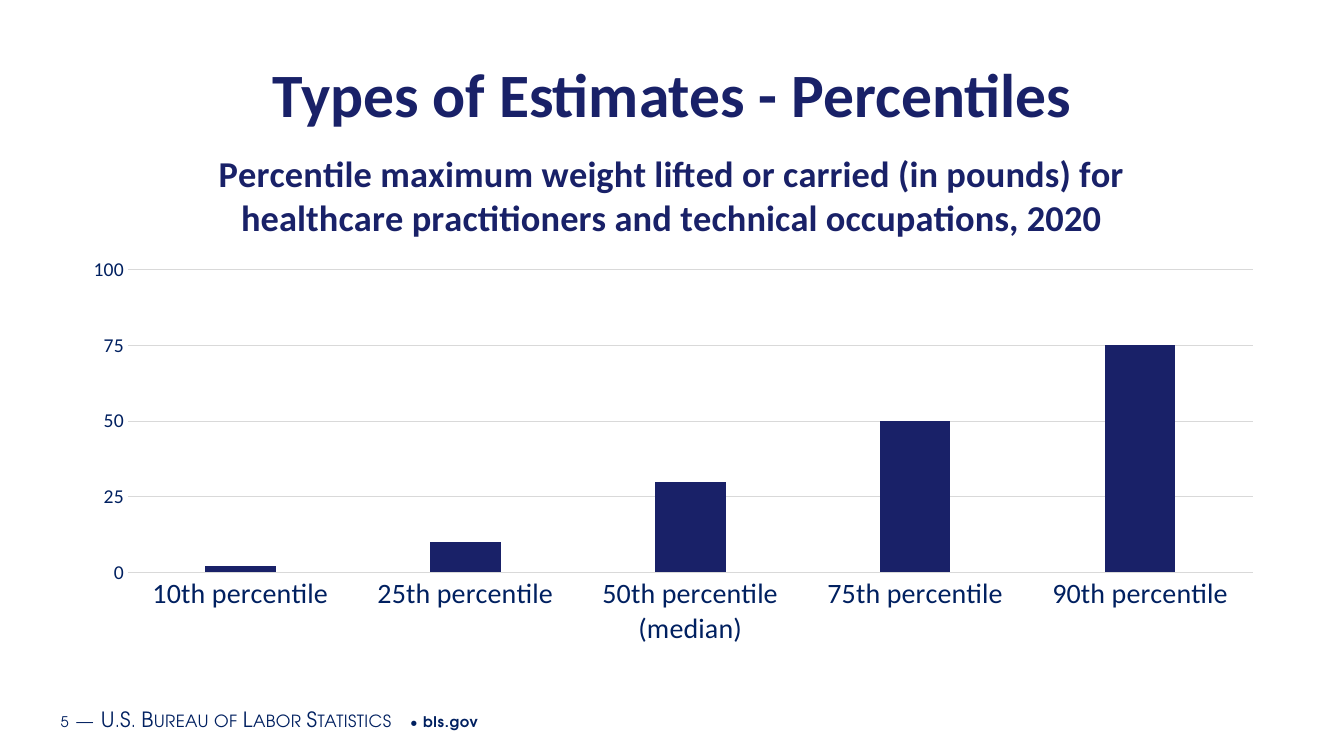
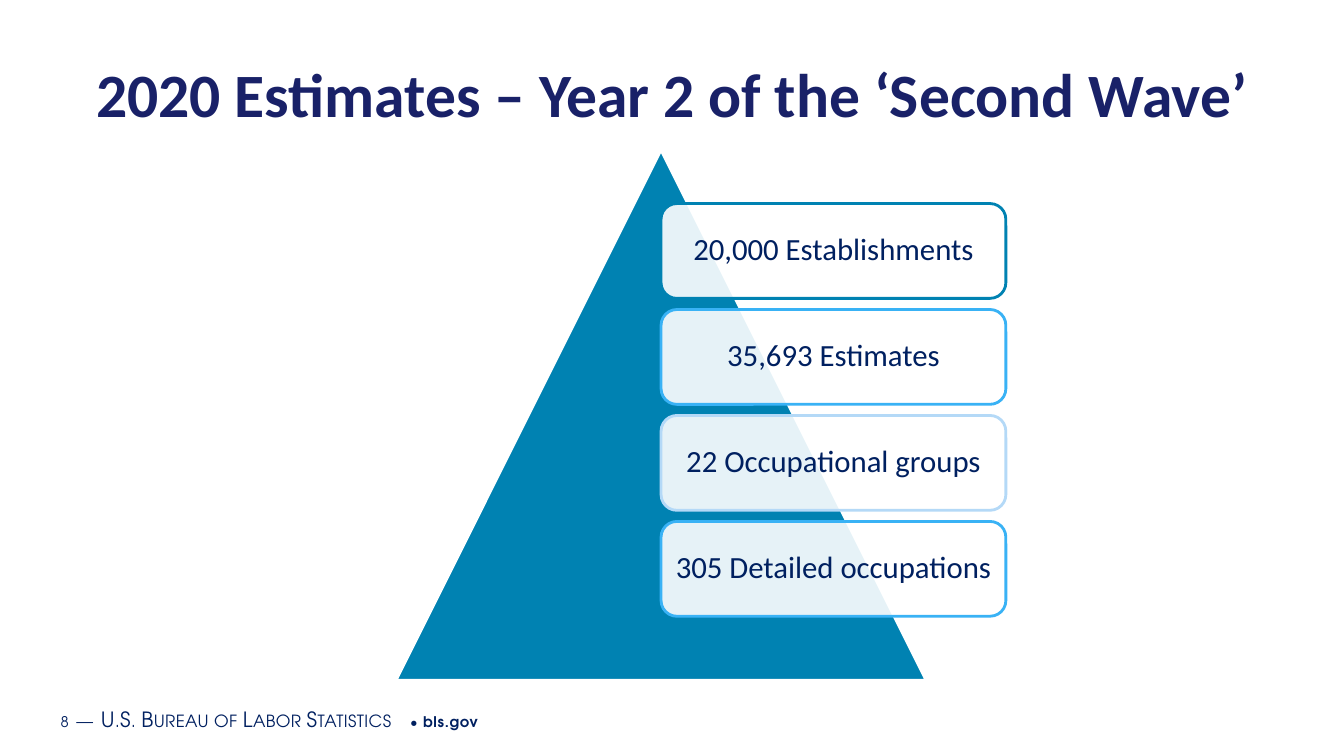
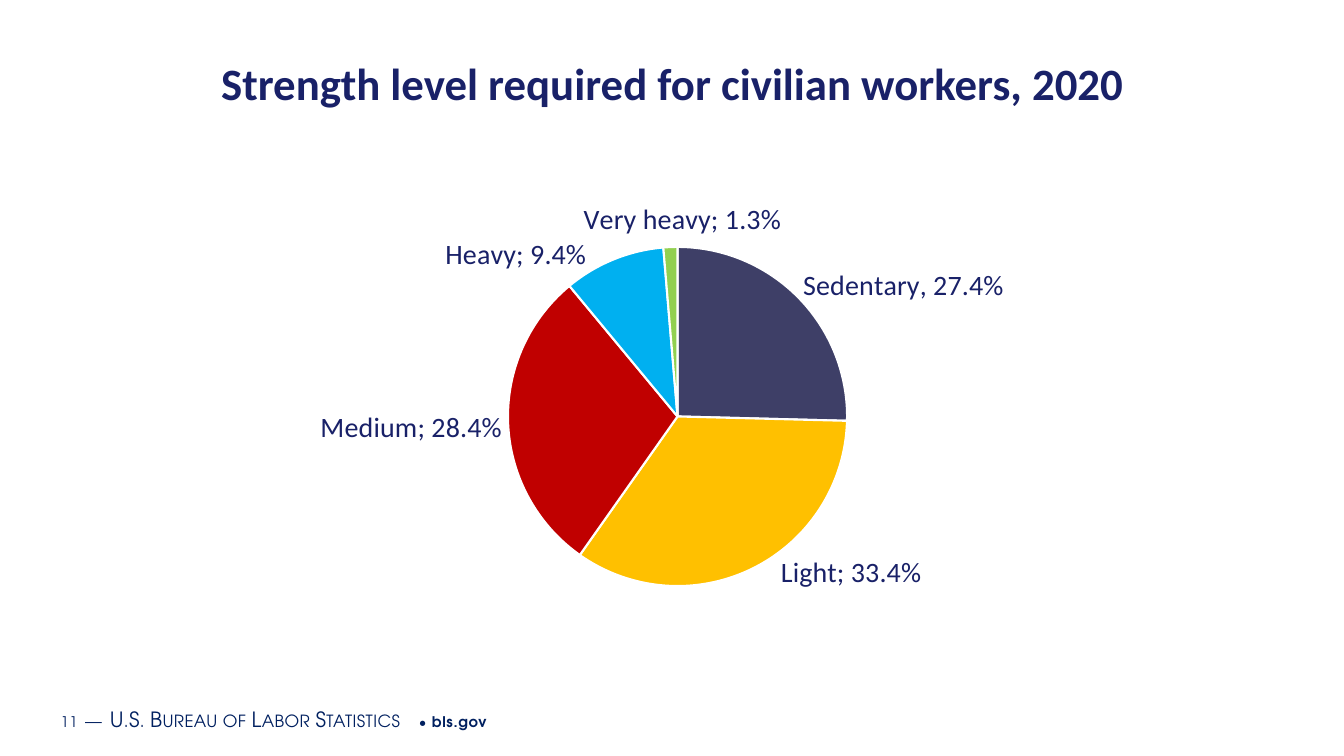
from dataclasses import dataclass
from typing import NamedTuple

from lxml import etree
from pptx import Presentation
from pptx import util as u
from pptx.chart import data
from pptx.dml.color import RGBColor
from pptx.enum import chart as charts
from pptx.enum import shapes, text
from pptx.oxml import ns


@dataclass(frozen=True)
class Theme:
    title_font: str = "Calibri"
    footer_font: str = "TeX Gyre Adventor"
    navy: str = "192168"
    ink: str = "002060"
    white: str = "FFFFFF"
    teal: str = "0082B2"
    sky: str = "39B2F5"
    pale: str = "B4D9F7"
    grid: str = "D9D9D9"
    title_size: float = 44
    small_title_size: float = 32
    chart_title_size: float = 26
    card_size: float = 22
    label_size: float = 20
    scale_size: float = 14
    footer_size: float = 15
    footer_small_size: float = 10.5
    footer_gap_size: float = 16


THEME = Theme()


class Box(NamedTuple):
    """Left, top, width and height in centimetres."""

    left: float
    top: float
    width: float
    height: float

    def lengths(self) -> list:
        return [u.Cm(value) for value in self]


class Card(NamedTuple):
    caption: str
    outline: str


class Slice(NamedTuple):
    """A pie slice; the shifts move its label by fractions of the chart area."""

    name: str
    share: float
    color: str
    shift_x: float
    shift_y: float


TITLE_BOX = Box(1.1, 1.28, 31.7, 2.24)
FOOTER_BOX = Box(1.35, 17.6, 21.5, 1.02)
COLUMN_BOX = Box(1.7, 3.18, 30.48, 13.39)
PIE_BOX = Box(1.37, 4.78, 31.1, 11.1)
TRIANGLE_BOX = Box(9.98, 3.78, 13.36, 13.36)
FIRST_CARD_BOX = Box(16.66, 5.13, 8.69, 2.39)
CARD_STEP = 2.67

PERCENTILES = {
    "10th percentile": 2,
    "25th percentile": 10,
    "50th percentile (median)": 30,
    "75th percentile": 50,
    "90th percentile": 75,
}
CARDS = [
    Card("20,000 Establishments", THEME.teal),
    Card("35,693 Estimates", THEME.sky),
    Card("22 Occupational groups", THEME.pale),
    Card("305 Detailed occupations", THEME.sky),
]
SLICES = [
    Slice("Sedentary", 0.247, "3E3F67", 0, 0.02),
    Slice("Light", 0.334, "FFC000", 0.02, -0.04),
    Slice("Medium", 0.284, "C00000", 0, 0.01),
    Slice("Heavy", 0.094, "00B0F0", -0.02, 0.04),
    Slice("Very heavy", 0.013, "92D050", 0.01, -0.01),
]


def rgb(color: str) -> RGBColor:
    return RGBColor.from_string(color)


def style_font(font, *, size: float, color: str = THEME.ink, name: str = THEME.title_font,
               bold: bool = False) -> None:
    font.name = name
    font.size = u.Pt(size)
    font.bold = bold
    font.color.rgb = rgb(color)


def style_line(line, color: str, width: float) -> None:
    line.color.rgb = rgb(color)
    line.width = u.Pt(width)


def add_text(paragraph, content: str, *, spacing: float = 0, small_caps: bool = False,
             **font_format) -> None:
    """Append a run; spacing is the letter spacing in points."""
    run = paragraph.add_run()
    run.text = content
    style_font(run.font, **font_format)
    properties = run.font._element
    if spacing:
        properties.set("spc", str(round(spacing * 100)))
    if small_caps:
        properties.set("cap", "small")


def add_title(slide, content: str, size: float) -> None:
    frame = slide.shapes.add_textbox(*TITLE_BOX.lengths()).text_frame
    frame.word_wrap = True
    paragraph = frame.paragraphs[0]
    paragraph.alignment = text.PP_ALIGN.CENTER
    add_text(paragraph, content, size=size, color=THEME.navy, bold=True)


def add_footer(slide, number: int) -> None:
    frame = slide.shapes.add_textbox(*FOOTER_BOX.lengths()).text_frame
    frame.word_wrap = True
    frame.vertical_anchor = text.MSO_ANCHOR.MIDDLE
    frame.margin_left = frame.margin_right = u.Cm(0.18)
    frame.margin_top = frame.margin_bottom = u.Cm(0.1)
    small = dict(size=THEME.footer_small_size, spacing=0.5)
    gap = dict(size=THEME.footer_gap_size, spacing=0.5)
    caps = dict(size=THEME.footer_size, spacing=0.3, small_caps=True)
    for content, run_format in [
        (str(number), small),
        (" ", gap),
        ("—", caps),
        (" ", gap),
        ("U.S. Bureau of Labor Statistics", caps),
        (" • ", small),
        ("bls.gov", dict(small, bold=True)),
    ]:
        add_text(frame.paragraphs[0], content, name=THEME.footer_font, **run_format)


def start_slide(presentation, number: int, title: str, title_size: float = THEME.title_size):
    slide = presentation.slides.add_slide(presentation.slide_layouts[6])
    add_footer(slide, number)
    add_title(slide, title, title_size)
    return slide


def add_shape(slide, kind, box: Box, fill: str, outline: str):
    shape = slide.shapes.add_shape(kind, *box.lengths())
    shape.shadow.inherit = False
    shape.fill.solid()
    shape.fill.fore_color.rgb = rgb(fill)
    style_line(shape.line, outline, 2)
    return shape


def set_opacity(shape, percent: int) -> None:
    color = shape.element.spPr.find(f"{ns.qn('a:solidFill')}/{ns.qn('a:srgbClr')}")
    etree.SubElement(color, ns.qn("a:alpha")).set("val", str(percent * 1000))


def add_card(slide, box: Box, card: Card) -> None:
    shape = add_shape(slide, shapes.MSO_SHAPE.ROUNDED_RECTANGLE, box, THEME.white, card.outline)
    set_opacity(shape, 90)
    frame = shape.text_frame
    frame.word_wrap = True
    frame.vertical_anchor = text.MSO_ANCHOR.MIDDLE
    frame.margin_left = frame.margin_right = 0
    paragraph = frame.paragraphs[0]
    paragraph.alignment = text.PP_ALIGN.CENTER
    paragraph.line_spacing = 0.9
    add_text(paragraph, card.caption, size=THEME.card_size)


def set_layout(parent, index: int, **settings) -> None:
    """Give a chart part a manual layout, put at the index its schema asks for."""
    for old_layout in parent.findall(ns.qn("c:layout")):
        parent.remove(old_layout)
    layout = etree.Element(ns.qn("c:layout"))
    parent.insert(index, layout)
    manual = etree.SubElement(layout, ns.qn("c:manualLayout"))
    for name, value in settings.items():
        etree.SubElement(manual, ns.qn(f"c:{name}")).set("val", str(value))


def place_plot(chart, **fractions: float) -> None:
    """Place the plot by fractions (x, y, w, h) of the chart area."""
    plot_area = chart.element.find(f".//{ns.qn('c:plotArea')}")
    set_layout(plot_area, 0, layoutTarget="inner", xMode="edge", yMode="edge", **fractions)


def add_chart(slide, kind, box: Box, categories, values, number_format: str = "General"):
    chart_data = data.CategoryChartData(number_format=number_format)
    chart_data.categories = categories
    chart_data.add_series("Series 1", values)
    chart = slide.shapes.add_chart(kind, *box.lengths(), chart_data).chart
    chart.has_legend = False
    chart.has_title = False
    style_font(chart.font, size=THEME.label_size)
    chart.plots[0].vary_by_categories = False
    return chart


def style_axis(axis, size: float) -> None:
    axis.major_tick_mark = axis.minor_tick_mark = charts.XL_TICK_MARK.NONE
    style_font(axis.tick_labels.font, size=size)


def build_percentiles(presentation) -> None:
    slide = start_slide(presentation, 5, "Types of Estimates - Percentiles")
    chart = add_chart(slide, charts.XL_CHART_TYPE.COLUMN_CLUSTERED, COLUMN_BOX,
                      list(PERCENTILES), list(PERCENTILES.values()))
    chart.has_title = True
    add_text(
        chart.chart_title.text_frame.paragraphs[0],
        "Percentile maximum weight lifted or carried (in pounds) for "
        "healthcare practitioners and technical occupations, 2020",
        size=THEME.chart_title_size, color=THEME.navy, bold=True,
    )
    place_plot(chart, x=0.05, y=0.27, w=0.93, h=0.57)

    plot = chart.plots[0]
    plot.gap_width = 219
    plot.overlap = -27
    columns = plot.series[0]
    columns.invert_if_negative = False
    columns.format.fill.solid()
    columns.format.fill.fore_color.rgb = rgb(THEME.navy)

    style_axis(chart.category_axis, THEME.label_size)
    style_line(chart.category_axis.format.line, THEME.grid, 0.75)
    scale = chart.value_axis
    style_axis(scale, THEME.scale_size)
    scale.minimum_scale, scale.maximum_scale, scale.major_unit = 0, 100, 25
    scale.format.line.fill.background()
    scale.has_major_gridlines = True
    style_line(scale.major_gridlines.format.line, THEME.grid, 0.75)


def build_second_wave(presentation) -> None:
    slide = start_slide(presentation, 8, "2020 Estimates – Year 2 of the ‘Second Wave’")
    add_shape(slide, shapes.MSO_SHAPE.ISOSCELES_TRIANGLE, TRIANGLE_BOX, THEME.teal, THEME.white)
    for index, card in enumerate(CARDS):
        box = FIRST_CARD_BOX._replace(top=FIRST_CARD_BOX.top + index * CARD_STEP)
        add_card(slide, box, card)


def label_slices(chart, series) -> None:
    label_format = dict(size=THEME.label_size, color=THEME.navy)
    labels = series.data_labels
    labels.number_format = "0.0%"
    labels.number_format_is_linked = False
    labels.position = charts.XL_LABEL_POSITION.OUTSIDE_END
    style_font(labels.font, **label_format)
    for index in range(len(SLICES)):
        label = series.points[index].data_label
        if index == 0:
            add_text(label.text_frame.paragraphs[0], "Sedentary, 27.4%", **label_format)
        else:
            style_font(label.font, **label_format)
        label.position = charts.XL_LABEL_POSITION.OUTSIDE_END

    root = chart.element
    for item, label_element in zip(SLICES, root.findall(f".//{ns.qn('c:dLbl')}")):
        set_layout(label_element, 1, x=item.shift_x, y=item.shift_y)
    for switch in root.findall(f".//{ns.qn('c:showCatName')}"):
        switch.set("val", "1")
    for switch in root.findall(f".//{ns.qn('c:showLeaderLines')}"):
        switch.set("val", "0")
    for switch in root.findall(f".//{ns.qn('c:showBubbleSize')}"):
        separator = etree.Element(ns.qn("c:separator"))
        separator.text = "; "
        switch.addnext(separator)


def build_strength(presentation) -> None:
    slide = start_slide(presentation, 11, "Strength level required for civilian workers, 2020",
                        THEME.small_title_size)
    chart = add_chart(slide, charts.XL_CHART_TYPE.PIE, PIE_BOX,
                      [item.name for item in SLICES], [item.share for item in SLICES], "0.0%")
    place_plot(chart, x=0.36, y=0.13, w=0.29, h=0.77)
    chart.plots[0].vary_by_categories = True
    series = chart.plots[0].series[0]
    for index, item in enumerate(SLICES):
        slice_format = series.points[index].format
        slice_format.fill.solid()
        slice_format.fill.fore_color.rgb = rgb(item.color)
        style_line(slice_format.line, THEME.white, 1.5)
    label_slices(chart, series)


def main() -> None:
    presentation = Presentation()
    presentation.slide_width = u.Cm(33.87)
    presentation.slide_height = u.Cm(19.05)
    build_percentiles(presentation)
    build_second_wave(presentation)
    build_strength(presentation)
    presentation.save("out.pptx")


if __name__ == "__main__":
    main()
